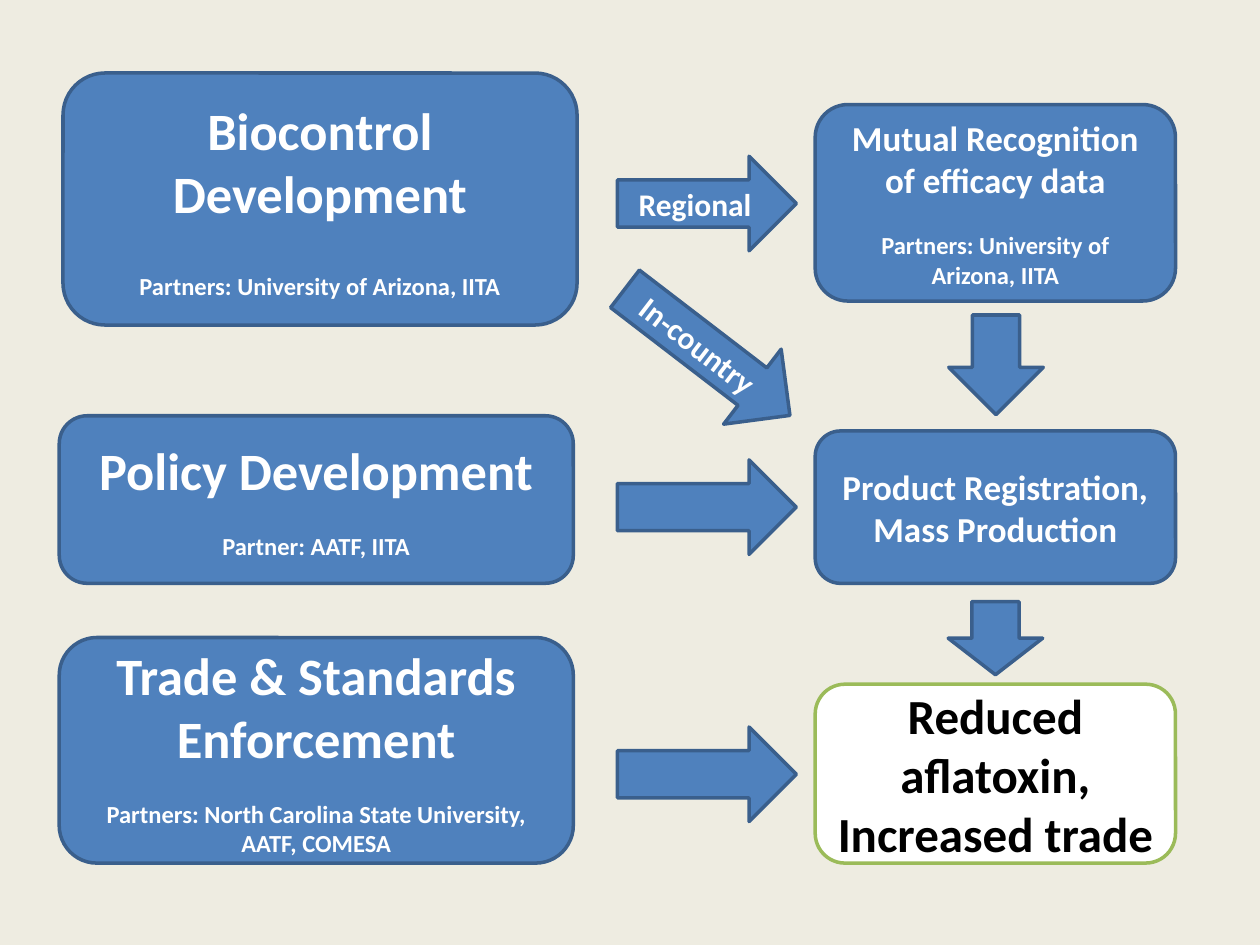
import pptx
import pptx.util
import pptx.dml.color
import pptx.enum.shapes
import pptx.enum.text

Inches, Pt = pptx.util.Inches, pptx.util.Pt
KIND = pptx.enum.shapes.MSO_SHAPE
BLUE, NAVY, WHITE, GREEN, BLACK = "4F81BD", "3A5F8C", "FFFFFF", "9BBB59", "000000"


def paint(color, code):
    color.rgb = pptx.dml.color.RGBColor.from_string(code)


def add(kind, place, lines=(), fill=BLUE, edge=NAVY, ink=WHITE):
    """Draw a shape; each line is (text, size, space before)."""
    shape = slide.shapes.add_shape(kind, *[Inches(n) for n in place])
    shape.shadow.inherit = False
    shape.fill.solid()
    paint(shape.fill.fore_color, fill)
    paint(shape.line.color, edge)
    shape.line.width = Pt(2)
    frame = shape.text_frame
    frame.word_wrap = True
    frame.vertical_anchor = pptx.enum.text.MSO_ANCHOR.MIDDLE
    for i, (text, size, gap) in enumerate(lines):
        para = frame.paragraphs[0] if i == 0 else frame.add_paragraph()
        para.text = text
        para.alignment = pptx.enum.text.PP_ALIGN.CENTER
        para.space_before = Pt(gap)
        para.font.name = "Calibri"
        para.font.size = Pt(size)
        para.font.bold = True
        paint(para.font.color, ink)
    return shape


deck = pptx.Presentation()
deck.slide_width, deck.slide_height = Inches(10), Inches(7.5)
slide = deck.slides.add_slide(deck.slide_layouts[6])
slide.background.fill.solid()
paint(slide.background.fill.fore_color, "EEECE1")

# Work areas on the left: left, top, height, title, partners, gap
areas = [
    (0.5, 0.58, 2, "Biocontrol Development",
     "Partners: University of Arizona, IITA", 27),
    (0.47, 3.3, 1.33, "Policy Development", "Partner: AATF, IITA", 17),
    (0.47, 5.06, 1.79, "Trade & Standards Enforcement",
     "Partners: North Carolina State University, AATF, COMESA", 17),
]
for left, top, high, title, partners, gap in areas:
    add(KIND.ROUNDED_RECTANGLE, (left, top, 4.08, high),
        [(title, 30, 0), (partners, 14, gap)])

# Results on the right: top, height, lines
steps = [
    (0.83, 1.56, [("Mutual Recognition of efficacy data", 20, 0),
                  ("Partners: University of Arizona, IITA", 14, 17)]),
    (3.42, 1.21, [("Product Registration, Mass Production", 20, 0)]),
]
for top, high, lines in steps:
    add(KIND.ROUNDED_RECTANGLE, (6.47, top, 2.86, high), lines)
add(KIND.ROUNDED_RECTANGLE, (6.47, 5.43, 2.86, 1.42),
    [("Reduced aflatoxin,", 28, 0), ("Increased trade", 28, 0)],
    WHITE, GREEN, BLACK)

# Arrows: left, top, length, turn, label
arrows = [
    (4.9, 1.24, 1.42, 0, "Regional"),
    (4.9, 3.65, 1.42, 0, ""),
    (4.9, 5.77, 1.42, 0, ""),
    (4.79, 2.42, 1.65, 37.5, "In-country"),
    (7.51, 2.52, 0.79, 90, ""),
    (7.61, 4.69, 0.58, 90, ""),
]
for left, top, length, turn, label in arrows:
    arrow = add(KIND.RIGHT_ARROW, (left, top, length, 0.75),
                [(label, 18, 0)] if label else [])
    arrow.rotation = turn

deck.save("out.pptx")
